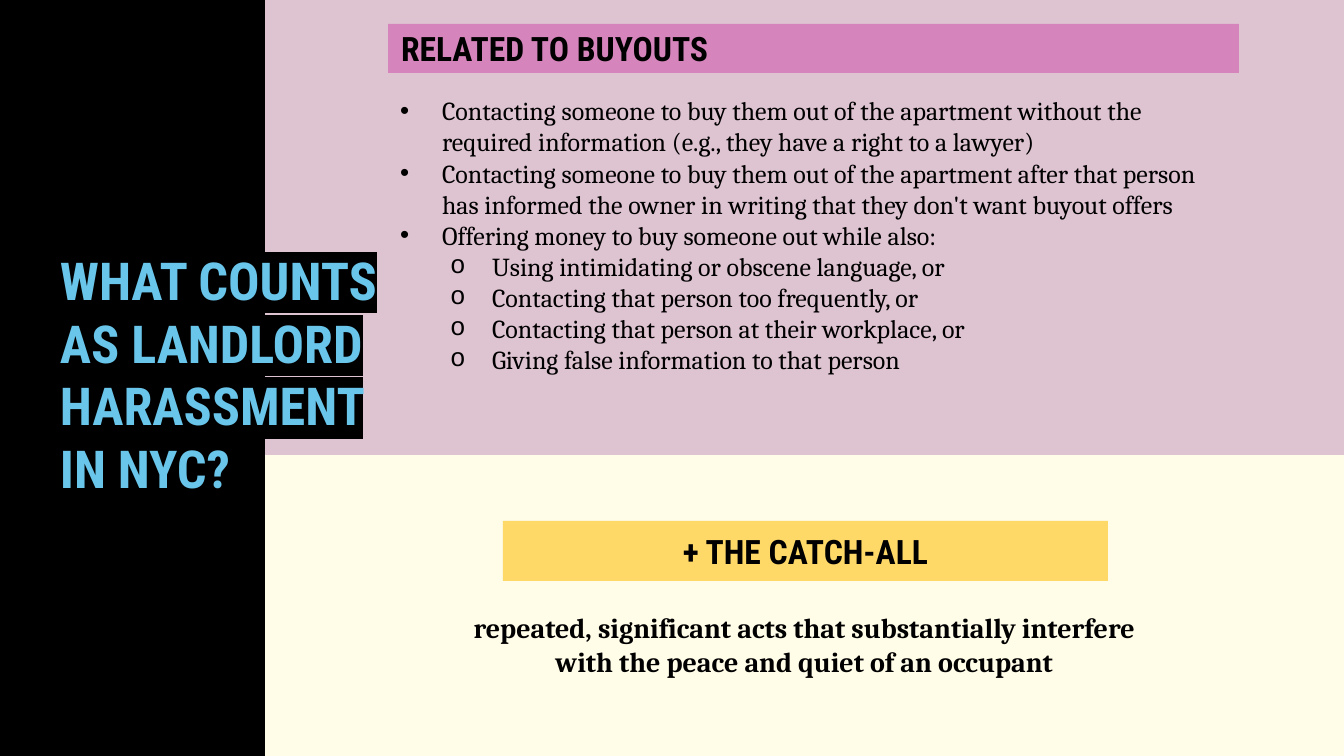
from lxml import etree
from pptx import Presentation
from pptx.dml.color import RGBColor
from pptx.enum.shapes import MSO_SHAPE
from pptx.enum.text import MSO_ANCHOR, PP_ALIGN
from pptx.oxml.ns import qn
from pptx.util import Pt

RECT = MSO_SHAPE.RECTANGLE
TOP, MIDDLE = MSO_ANCHOR.TOP, MSO_ANCHOR.MIDDLE
LEFT, CENTER = PP_ALIGN.LEFT, PP_ALIGN.CENTER

PX = 914400 / 134.4
THEME = {
    "black": "000000", "cream": "FFFCE8", "mauve": "DEC3D1",
    "pink": "D685BC", "yellow": "FED968", "blue": "6AC5EA",
    "display": "Roboto Condensed", "serif": "Cambria",
    "title": 28, "heading": 18, "catch_all": 15, "body": 13.9,
}

prs = Presentation()
prs.slide_width, prs.slide_height = round(1344 * PX), round(756 * PX)
slide = prs.slides.add_slide(prs.slide_layouts[6])


def add_box(left, top, width, height, fill=None, anchor=TOP, insets=(13, 13)):
    """Add a filled rectangle, or a plain text box when there is no fill."""
    place = [round(n * PX) for n in (left, top, width, height)]
    if fill:
        box = slide.shapes.add_shape(RECT, *place)
        box.shadow.inherit = False
        box.fill.solid()
        box.fill.fore_color.rgb = RGBColor.from_string(THEME[fill])
        box.line.fill.background()
    else:
        box = slide.shapes.add_textbox(*place)
    frame = box.text_frame
    frame.word_wrap = True
    frame.vertical_anchor = anchor
    frame.margin_left = frame.margin_right = round(insets[0] * PX)
    frame.margin_top = frame.margin_bottom = round(insets[1] * PX)
    return frame


def add_text(paragraph, text, font, size, bold=True, color="black", align=LEFT):
    """Add one styled run to a paragraph."""
    paragraph.alignment = align
    run = paragraph.add_run()
    run.text = text
    run.font.name = THEME[font]
    run.font.size = Pt(THEME[size])
    run.font.bold = bold
    run.font.color.rgb = RGBColor.from_string(THEME[color])
    return run


# Background panels
add_box(258, 455, 1086, 301, "cream")
add_box(263, 0, 1081, 455, "mauve")
add_box(0, 0, 265, 756, "black")

# Buyout rules: (level, text)
rules = [
    (0, "Contacting someone to buy them out of the apartment without the "
        "required information (e.g., they have a right to a lawyer)"),
    (0, "Contacting someone to buy them out of the apartment after that person "
        "has informed the owner in writing that they don't want buyout offers"),
    (0, "Offering money to buy someone out while also:"),
    (1, "Using intimidating or obscene language, or"),
    (1, "Contacting that person too frequently, or"),
    (1, "Contacting that person at their workplace, or"),
    (1, "Giving false information to that person"),
]
bullets = [("•", "Arial", 42), ("o", "Courier New", 92)]
rules_frame = add_box(390, 90, 849, 331, insets=(10, 5))
for index, (level, rule) in enumerate(rules):
    paragraph = rules_frame.paragraphs[0] if index == 0 else rules_frame.add_paragraph()
    paragraph.level = level
    symbol, symbol_font, indent = bullets[level]
    props = paragraph._p.get_or_add_pPr()
    props.set("marL", str(round(indent * PX)))
    props.set("indent", str(round(-42 * PX)))
    bullet_color = etree.SubElement(props, qn("a:buClr"))
    etree.SubElement(bullet_color, qn("a:srgbClr"), val=THEME["black"])
    etree.SubElement(props, qn("a:buFont"), typeface=symbol_font)
    etree.SubElement(props, qn("a:buChar"), char=symbol)
    add_text(paragraph, rule, "serif", "body", bold=False)

# Catch-all definition
definition = add_box(435, 606, 739, 129, insets=(10, 5))
add_text(definition.paragraphs[0],
         "repeated, significant acts that substantially interfere "
         "with the peace and quiet of an occupant",
         "serif", "catch_all", align=CENTER)

# Slide title, highlighted in black where it leaves the side panel
title = add_box(47, 235, 387, 261)
title_run = add_text(title.paragraphs[0], "WHAT COUNTS AS LANDLORD HARASSMENT IN NYC?",
                     "display", "title", color="blue")
highlight = etree.Element(qn("a:highlight"))
etree.SubElement(highlight, qn("a:srgbClr"), val=THEME["black"])
title_run.font._element.find(qn("a:solidFill")).addnext(highlight)

# Section headings
for heading, place, fill, align in [
    ("RELATED TO BUYOUTS", (388, 24, 851, 49), "pink", LEFT),
    ("+ THE CATCH-ALL", (503, 521, 605, 60), "yellow", CENTER),
]:
    bar = add_box(*place, fill, MIDDLE)
    add_text(bar.paragraphs[0], heading, "display", "heading", align=align)

prs.save("out.pptx")
